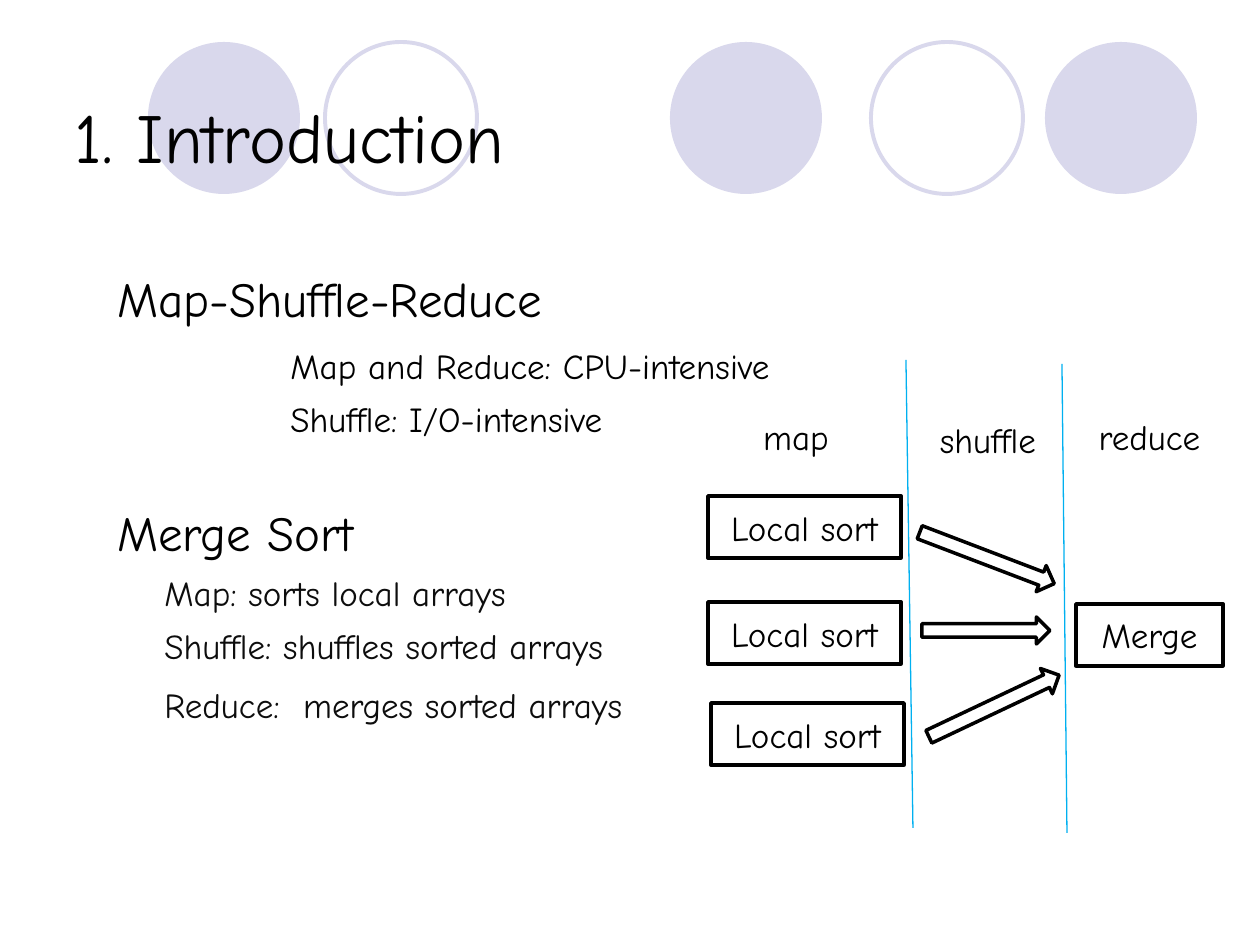
from dataclasses import dataclass

from lxml import etree
from pptx import Presentation
from pptx import util as u
from pptx.dml.color import RGBColor
from pptx.enum import shapes, text
from pptx.oxml.ns import qn


@dataclass(frozen=True)
class Theme:
    """Colours, type sizes and line widths."""
    font: str = "Comic Neue"
    ink: str = "000000"
    soft: str = "0D0D0D"
    paper: str = "FFFFFF"
    lilac: str = "D9D8EC"
    blue: str = "00B0F0"
    title: int = 40
    head: int = 28
    body: int = 20
    thin: float = 0.75
    rule: float = 2
    ring: float = 2.25


T = Theme()
KIND = shapes.MSO_SHAPE


def px(n):
    """Turn px into EMU."""
    return u.Emu(round(n * 914400 / 126))


def rgb(hue):
    """Turn a hex string into a colour."""
    return RGBColor.from_string(hue)


def write(para, words, size, hue=T.ink):
    """Add one run to a paragraph."""
    run = para.add_run()
    run.text = words
    run.font.name = T.font
    run.font.size = u.Pt(size)
    run.font.color.rgb = rgb(hue)


def shape(slide, kind, at, fill=None, line=None, width=T.rule):
    """Add a preset shape with optional fill and line."""
    item = slide.shapes.add_shape(kind, *map(px, at))
    item.shadow.inherit = False
    if fill:
        item.fill.solid()
        item.fill.fore_color.rgb = rgb(fill)
    else:
        item.fill.background()
    if line:
        item.line.color.rgb = rgb(line)
        item.line.width = u.Pt(width)
    else:
        item.line.fill.background()
    return item


def box(slide, words, at, line=T.ink):
    """Add a white rectangle with a centred label."""
    frame = shape(slide, KIND.RECTANGLE, at, T.paper, line).text_frame
    frame.vertical_anchor = text.MSO_ANCHOR.MIDDLE
    para = frame.paragraphs[0]
    para.alignment = text.PP_ALIGN.CENTER
    write(para, words, T.body)


def arrow(slide, at, turn):
    """Add a block arrow turned by some degrees."""
    shape(slide, KIND.RIGHT_ARROW, at, T.paper, T.ink).rotation = turn


def divide(slide, x1, y1, x2, y2):
    """Add a thin stage divider."""
    line = slide.shapes.add_connector(
        shapes.MSO_CONNECTOR.STRAIGHT, *map(px, (x1, y1, x2, y2)))
    line.line.color.rgb = rgb(T.blue)
    line.line.width = u.Pt(T.thin)
    etree.SubElement(line._element.spPr, qn("a:effectLst"))


def area(slide, at):
    """Add a wrapping text box and return its frame."""
    frame = slide.shapes.add_textbox(*map(px, at)).text_frame
    frame.word_wrap = True
    return frame


def title(slide, words):
    """Add the slide title."""
    frame = area(slide, (75, 94, 1170, 84))
    frame.margin_left = frame.margin_right = 0
    frame.vertical_anchor = text.MSO_ANCHOR.MIDDLE
    write(frame.paragraphs[0], words, T.title)


def outline(slide, rows):
    """Add the indented outline, one row a paragraph."""
    frame = area(slide, (42, 262, 1180, 624))
    for i, (words, size, hue, indent, gap) in enumerate(rows):
        para = frame.add_paragraph() if i else frame.paragraphs[0]
        para.space_before = u.Pt(gap)
        para._p.get_or_add_pPr().set("marL", str(px(indent)))
        write(para, words, size, hue)


def main():
    """Build the slide and save it."""
    deck = Presentation()
    deck.slide_width, deck.slide_height = px(1260), px(945)
    slide = deck.slides.add_slide(deck.slide_layouts[6])

    for x in (670, 1045, 148):
        shape(slide, KIND.OVAL, (x, 42, 152, 152), fill=T.lilac)
    for x in (871, 325):
        shape(slide, KIND.OVAL, (x, 42, 152, 152), line=T.lilac, width=T.ring)

    title(slide, "1. Introduction")
    outline(slide, [
        ("Map-Shuffle-Reduce", T.head, T.ink, 63, 6),
        ("Map and Reduce: CPU-intensive", T.body, T.ink, 236, 10),
        ("Shuffle: I/O-intensive", T.body, T.ink, 236, 6),
        ("Merge Sort", T.head, T.ink, 63, 36),
        ("Map: sorts local arrays", T.body, T.soft, 110, 6),
        ("Shuffle: shuffles sorted arrays", T.body, T.soft, 110, 6),
        ("Reduce:  merges sorted arrays", T.body, T.soft, 110, 10),
    ])

    for words, x, y, wide in (("map", 729, 406, 134),
                              ("shuffle", 912, 408, 152),
                              ("reduce", 1079, 406, 141)):
        box(slide, words, (x, y, wide, 62), T.paper)
    for x, y in ((708, 496), (708, 602), (711, 703)):
        box(slide, "Local sort", (x, y, 193, 62))
    box(slide, "Merge", (1076, 604, 147, 62))

    arrow(slide, (922, 617, 128, 27), 0)
    arrow(slide, (915, 544, 144, 28), 20.9)
    arrow(slide, (922, 692, 144, 28), 334.7)
    divide(slide, 906, 360, 913, 828)
    divide(slide, 1062, 364, 1067, 833)
    deck.save("out.pptx")


if __name__ == "__main__":
    main()
